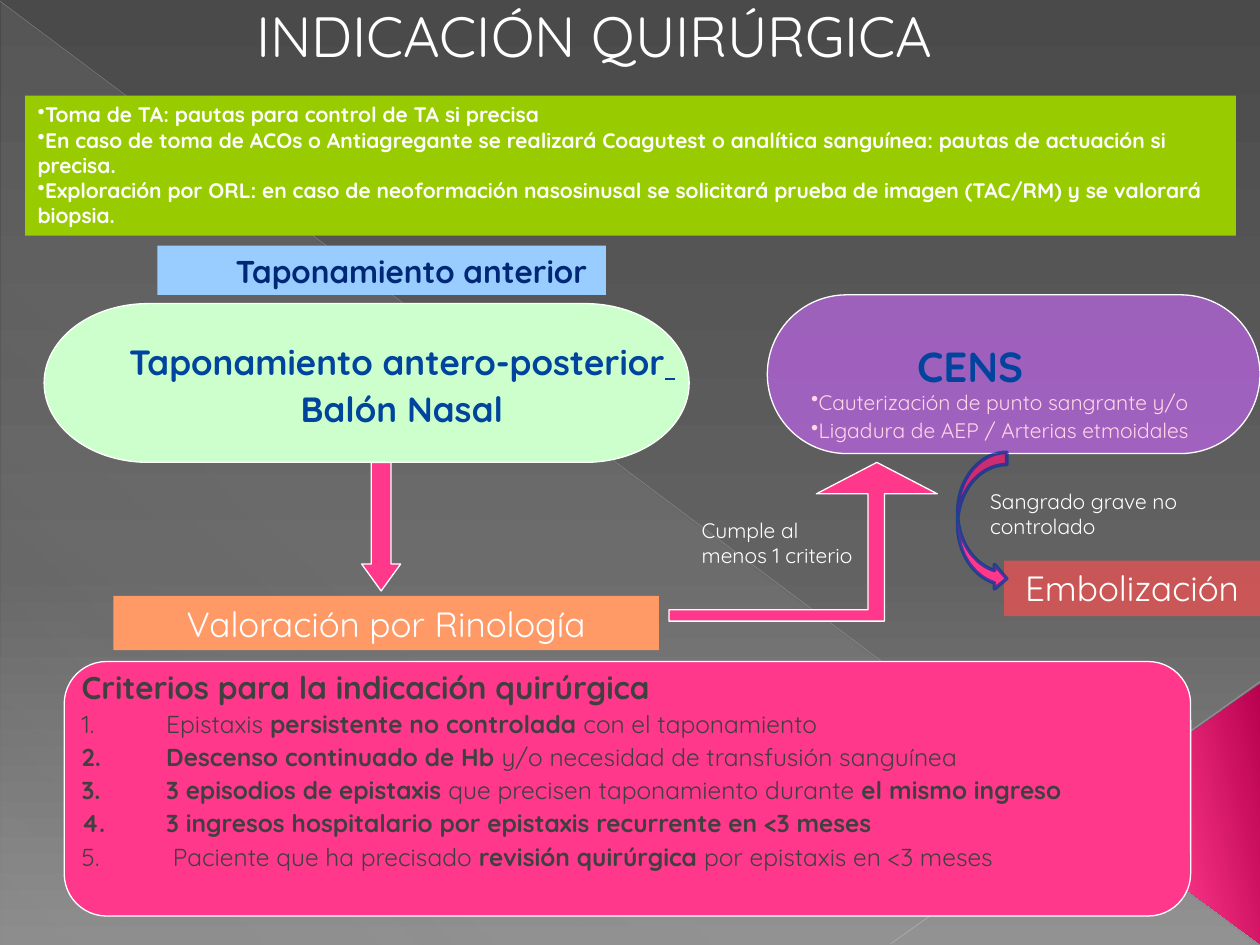
from dataclasses import dataclass
from typing import NamedTuple, Optional

from lxml.etree import SubElement
from pptx import Presentation
from pptx.dml.color import RGBColor
from pptx.enum.shapes import MSO_CONNECTOR, MSO_SHAPE as Preset
from pptx.enum.text import MSO_ANCHOR as Anchor, PP_ALIGN as Align
from pptx.oxml.ns import qn
from pptx.util import Emu, Inches, Pt

COLUMNS, ROWS = 100, 75


@dataclass(frozen=True)
class Theme:
    font: str = "Quicksand"
    white: str = "FFFFFF"
    pink: str = "FF388C"
    pale_pink: str = "FFD7E8"
    purple: str = "CC66FF"
    mint: str = "CCFFCC"
    sky: str = "99CCFF"
    lime: str = "99CC00"
    orange: str = "FF9966"
    red: str = "FF5050"
    navy: str = "002776"
    blue: str = "00449E"
    outline_blue: str = "00349E"
    charcoal: str = "404040"
    title: float = 32.4
    heading: float = 24
    large: float = 20
    medium: float = 18
    item: float = 14
    small: float = 12
    gap: float = 0.15


class Area(NamedTuple):
    column: float
    row: float
    columns: float
    rows: float


class Stop(NamedTuple):
    position: int
    color: str
    opacity: int = 100


class Stroke(NamedTuple):
    color: str
    width: float = 0.75
    opacity: int = 100


@dataclass(frozen=True)
class Block:
    preset: Preset
    area: Area
    fill: str
    opacity: int = 100
    stroke: Optional[Stroke] = None
    adjustments: tuple = ()


THEME = Theme()
WHITE_EDGE = Stroke(THEME.white)
deck = Presentation()
deck.slide_width, deck.slide_height = Inches(10), Inches(7.5)
page = deck.slides.add_slide(deck.slide_layouts[6])


def across(columns: float) -> Emu:
    return Emu(round(deck.slide_width * columns / COLUMNS))


def down(rows: float) -> Emu:
    return Emu(round(deck.slide_height * rows / ROWS))


def place(area: Area) -> tuple:
    return across(area.column), down(area.row), across(area.columns), down(area.rows)


def set_opacity(color, opacity: int) -> None:
    if opacity < 100:
        SubElement(color, qn("a:alpha"), val=str(opacity * 1000))


def set_gradient(element, stops: list[Stop], angle: int) -> None:
    solid = next(element.iter(qn("a:solidFill")))
    gradient = solid.getparent().makeelement(qn("a:gradFill"), {"rotWithShape": "1"})
    stop_list = SubElement(gradient, qn("a:gsLst"))
    for stop in stops:
        mark = SubElement(stop_list, qn("a:gs"), pos=str(stop.position * 1000))
        set_opacity(SubElement(mark, qn("a:srgbClr"), val=stop.color), stop.opacity)
    SubElement(gradient, qn("a:lin"), ang=str(angle * 60000), scaled="0")
    solid.getparent().replace(solid, gradient)


def set_stroke(line, stroke: Stroke) -> None:
    line.color.rgb = RGBColor.from_string(stroke.color)
    line.width = Pt(stroke.width)
    set_opacity(line.fill._xPr.find(".//" + qn("a:srgbClr")), stroke.opacity)


def paint(shape, fill: str, opacity: int = 100, stroke: Optional[Stroke] = None) -> None:
    shape.shadow.inherit = False
    shape.fill.solid()
    shape.fill.fore_color.rgb = RGBColor.from_string(fill)
    set_opacity(next(shape._element.spPr.iter(qn("a:srgbClr"))), opacity)
    if stroke:
        set_stroke(shape.line, stroke)
    else:
        shape.line.fill.background()


def draw_block(block: Block):
    shape = page.shapes.add_shape(block.preset, *place(block.area))
    for index, value in enumerate(block.adjustments):
        shape.adjustments[index] = value
    paint(shape, block.fill, block.opacity, block.stroke)
    return shape


def draw_line(start: tuple, end: tuple, stroke: Stroke) -> None:
    line = page.shapes.add_connector(
        MSO_CONNECTOR.STRAIGHT, across(start[0]), down(start[1]), across(end[0]), down(end[1]))
    set_stroke(line.line, stroke)
    SubElement(line._element.spPr, qn("a:effectLst"))


def add_span(para, text: str, *, size: float, color: str, bold: bool, underline: bool = False) -> None:
    span = para.add_run()
    span.text = text
    span.font.name, span.font.size = THEME.font, Pt(size)
    span.font.bold, span.font.underline = bold, underline
    span.font.color.rgb = RGBColor.from_string(color)


def write(box, *lines: str, size: float = THEME.small, color: str = THEME.white,
          bold: bool = False, align: Align = Align.LEFT, anchor: Anchor = Anchor.TOP,
          gap: float = 0, bullet: str = "", numbered: bool = False,
          margin: float = 0, indent: float = 0):
    frame = box.text_frame
    frame.word_wrap, frame.vertical_anchor = True, anchor
    for text in lines:
        para = frame.add_paragraph() if frame.text else frame.paragraphs[0]
        para.alignment, para.space_before = align, Pt(size * gap)
        properties = para._p.get_or_add_pPr()
        properties.set("marL", str(across(margin)))
        properties.set("indent", str(across(indent)))
        if bullet:
            SubElement(properties, qn("a:buChar"), char=bullet)
        if numbered:
            SubElement(properties, qn("a:buAutoNum"), type="arabicPeriod")
        for index, part in enumerate(text.split("**")):
            if part:
                add_span(para, part, size=size, color=color, bold=bold or index % 2 == 1)
    return frame


def text_box(area: Area, *lines: str, **style):
    box = page.shapes.add_textbox(*place(area))
    write(box, *lines, **style)
    return box


def draw_backdrop() -> None:
    page.background.fill.solid()
    set_gradient(page.element, [Stop(0, "4A4A4A"), Stop(60, "626262"), Stop(100, "8C8C8C")], 90)
    sheen = draw_block(Block(Preset.RIGHT_TRIANGLE, Area(0.1, 0.2, 99.8, 74.8), "D2D2D2"))
    set_gradient(sheen._element.spPr,
                 [Stop(0, "D2D2D2", 10), Stop(70, "D2D2D2", 8), Stop(100, "D2D2D2", 1)], 133)
    draw_line((0, 0.1), (99.9, 74.9), Stroke("BFBFBF", 0.39, 35))
    draw_line((100, 54.1), (70.7, 74.9), Stroke("C6C6C6", 0.47, 45))
    corner = draw_block(Block(Preset.ISOSCELES_TRIANGLE, Area(82.6, 57.5, 20.7, 14.2),
                              THEME.pink, adjustments=(0.51,)))
    corner.rotation = 270
    set_gradient(corner._element.spPr,
                 [Stop(0, "B8014E"), Stop(60, THEME.pink), Stop(100, "FF9CB9")], 258)


def draw_bent_arrow() -> None:
    tip, *corners = [(69.6, 36.7), (64.8, 39.2), (68.9, 39.2), (68.9, 48.4), (53.1, 48.4),
                     (53.1, 49.3), (70.2, 49.3), (70.2, 39.2), (74.4, 39.2)]
    builder = page.shapes.build_freeform(across(tip[0]), down(tip[1]))
    builder.add_line_segments([(across(x), down(y)) for x, y in corners], close=True)
    paint(builder.convert_to_shape(), THEME.pink, stroke=WHITE_EDGE)


def main() -> None:
    draw_backdrop()
    for block in (
        Block(Preset.FLOWCHART_TERMINATOR, Area(60.9, 23.4, 39.1, 12.6), THEME.purple, 60, WHITE_EDGE),
        Block(Preset.FLOWCHART_TERMINATOR, Area(3.5, 24.1, 51.2, 12.6), THEME.mint, 100, WHITE_EDGE),
        Block(Preset.FLOWCHART_ALTERNATE_PROCESS, Area(5.1, 52.5, 89.4, 20.2), THEME.pink, 100, WHITE_EDGE),
        Block(Preset.DOWN_ARROW, Area(28.7, 36.7, 3.1, 10.2), THEME.pink, 100, WHITE_EDGE, (0.5, 0.69)),
    ):
        draw_block(block)

    text_box(Area(10.2, 0, 64.8, 6), "INDICACIÓN QUIRÚRGICA", size=THEME.title,
             align=Align.RIGHT, anchor=Anchor.BOTTOM)
    anterior = draw_block(Block(Preset.RECTANGLE, Area(12.5, 19.5, 35.6, 3.9), THEME.sky))
    write(anterior, "Taponamiento anterior", size=THEME.medium, color=THEME.navy,
          bold=True, align=Align.RIGHT).margin_right = across(1.5)

    packing = text_box(Area(7.5, 26.5, 48.8, 3.9), "Taponamiento antero-posterior", "Balón Nasal",
                       size=THEME.large, color=THEME.blue, bold=True, align=Align.CENTER, gap=THEME.gap)
    add_span(packing.text_frame.paragraphs[0], " ", size=THEME.large, color=THEME.blue,
             bold=True, underline=True)

    criteria = text_box(Area(5.5, 52.5, 89.1, 18.9), "Criterios para la indicación quirúrgica",
                        size=THEME.medium, color=THEME.charcoal, bold=True, gap=THEME.gap)
    write(criteria,
          "Epistaxis **persistente no controlada **con el taponamiento",
          "**Descenso continuado de Hb **y/o necesidad de transfusión sanguínea",
          "**3 episodios de epistaxis **que precisen taponamiento durante **el mismo ingreso**",
          "**3 ingresos hospitalario por epistaxis recurrente en <3 meses**",
          " Paciente que ha precisado **revisión quirúrgica **por epistaxis en <3 meses",
          size=THEME.item, color=THEME.charcoal, gap=THEME.gap, numbered=True, margin=6.7, indent=-6.7)

    text_box(Area(61.8, 26.5, 35.4, 5), "CENS", size=THEME.heading, color=THEME.blue,
             bold=True, gap=THEME.gap, margin=10)
    assessment = draw_block(Block(Preset.RECTANGLE, Area(9, 47.3, 43.3, 4.3), THEME.orange))
    write(assessment, "Valoración por Rinología", size=THEME.large, align=Align.CENTER, gap=THEME.gap)
    draw_bent_arrow()
    text_box(Area(54.7, 40.6, 14.2, 5.1), "Cumple al menos 1 criterio")
    text_box(Area(63.4, 30.4, 36.6, 5.5), "Cauterización de punto sangrante y/o",
             "Ligadura de AEP / Arterias etmoidales", color=THEME.pale_pink, gap=THEME.gap, bullet="•")

    measures = draw_block(Block(Preset.RECTANGLE, Area(2, 7.6, 96.1, 11.1), THEME.lime))
    write(measures,
          "Toma de TA: pautas para control de TA si precisa",
          "En caso de toma de ACOs o Antiagregante se realizará Coagutest o analítica sanguínea: "
          "pautas de actuación si precisa.",
          "Exploración por ORL: en caso de neoformación nasosinusal se solicitará prueba de imagen "
          "(TAC/RM) y se valorará biopsia.", bold=True, bullet="•")

    embolization = draw_block(Block(Preset.RECTANGLE, Area(79.7, 44.5, 20.3, 4.4), THEME.red, 66))
    write(embolization, "Embolización", size=THEME.large, align=Align.CENTER, gap=THEME.gap)
    text_box(Area(77.6, 38.3, 20.1, 5.1), "Sangrado grave no controlado")
    draw_block(Block(Preset.CURVED_RIGHT_ARROW, Area(76, 35.9, 3.9, 11), THEME.pink,
                     stroke=Stroke(THEME.outline_blue, 2, 71)))
    deck.save("out.pptx")


if __name__ == "__main__":
    main()
